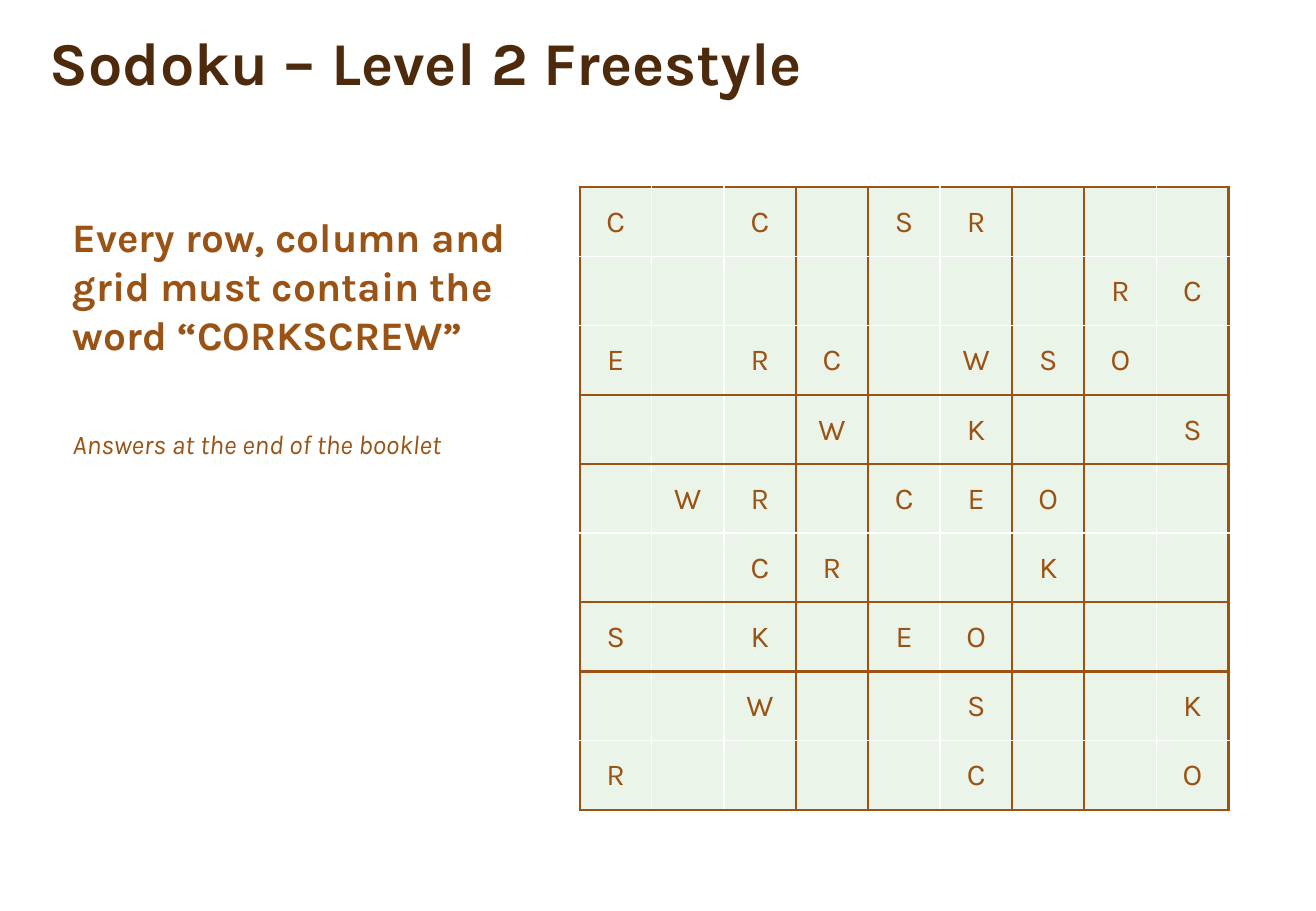
from dataclasses import dataclass

from lxml import etree
from pptx import Presentation
from pptx.dml.color import RGBColor
from pptx.enum.text import MSO_ANCHOR, MSO_AUTO_SIZE, PP_ALIGN
from pptx.oxml.ns import qn
from pptx.util import Inches, Pt

MIDDLE, BOTTOM, TOP = MSO_ANCHOR.MIDDLE, MSO_ANCHOR.BOTTOM, MSO_ANCHOR.TOP
LEFT, CENTER = PP_ALIGN.LEFT, PP_ALIGN.CENTER
NO_FIT = MSO_AUTO_SIZE.NONE
TITLE_ONLY = 5

PUZZLE = """
C.C.SR...
.......RC
E.RC.WSO.
...W.K..S
.WR.CEO..
..CR..K..
S.K.EO...
..W..S..K
R....C..O
""".split()
BLOCK = 3


@dataclass(frozen=True)
class Theme:
    font: str = "Karla"
    dark: str = "4D2A0B"
    brown: str = "9A5315"
    white: str = "FFFFFF"
    mint: str = "EBF4E8"
    title_size: int = 36
    rule_size: int = 24
    note_size: int = 16
    letter_size: int = 18
    thick: float = 1.5
    thin: float = 1


class PuzzleSlide:
    def __init__(self, deck, theme):
        self.theme = theme
        self.width, self.height = deck.slide_width, deck.slide_height
        self.page = deck.slides.add_slide(deck.slide_layouts[TITLE_ONLY])

    def area(self, left, top, width, height):
        return (round(left * self.width), round(top * self.height),
                round(width * self.width), round(height * self.height))

    def style(self, para, size, color, bold=False, italic=False):
        para.font.name = self.theme.font
        para.font.size = Pt(size)
        para.font.bold = bold
        para.font.italic = italic
        para.font.color.rgb = RGBColor.from_string(color)

    def title(self, text, share):
        box = self.page.shapes.title
        box.left, box.top, box.width, box.height = self.area(*share)
        frame = box.text_frame
        frame.text = text
        frame.vertical_anchor = BOTTOM
        frame.auto_size = NO_FIT
        para = frame.paragraphs[0]
        para.alignment = LEFT
        para.line_spacing = 0.9
        self.style(para, self.theme.title_size, self.theme.dark, bold=True)

    def instructions(self, rule, note, share):
        frame = self.page.shapes.add_textbox(*self.area(*share)).text_frame
        frame.word_wrap = True
        frame.vertical_anchor = TOP
        rule_para, note_para = frame.paragraphs[0], frame.add_paragraph()
        rule_para.text, note_para.text = rule, note
        rule_para.space_after = note_para.space_after = Pt(6)
        note_para.space_before = Pt(35)
        self.style(rule_para, self.theme.rule_size, self.theme.brown, bold=True)
        self.style(note_para, self.theme.note_size, self.theme.brown, italic=True)

    def border(self, cell, side, heavy):
        width = self.theme.thick if heavy else self.theme.thin
        color = self.theme.brown if heavy else self.theme.white
        properties = cell._tc.get_or_add_tcPr()
        line = etree.SubElement(properties, qn(f"a:ln{side}"), w=str(Pt(width)))
        fill = etree.SubElement(line, qn("a:solidFill"))
        etree.SubElement(fill, qn("a:srgbClr"), val=color)

    def puzzle(self, rows, share):
        size = len(rows)
        left, top, width, height = self.area(*share)
        table = self.page.shapes.add_table(size, size, left, top, width, height).table
        table.first_row = table.horz_banding = False
        for row, letters in enumerate(rows):
            for column, letter in enumerate(letters):
                self.square(table.cell(row, column), row, column, letter)

    def square(self, cell, row, column, letter):
        for start, end, index in (("L", "R", column), ("T", "B", row)):
            self.border(cell, start, index % BLOCK == 0)
            self.border(cell, end, index % BLOCK == BLOCK - 1
                        or index > 0 and index % BLOCK == 0)
        cell.fill.solid()
        cell.fill.fore_color.rgb = RGBColor.from_string(self.theme.mint)
        if letter == ".":
            return
        cell.vertical_anchor = MIDDLE
        cell.margin_left = cell.margin_right = cell.margin_top = Inches(0.01)
        cell.margin_bottom = 0
        para = cell.text_frame.paragraphs[0]
        para.text = letter
        para.alignment = CENTER
        self.style(para, self.theme.letter_size, self.theme.brown)


def main():
    deck = Presentation()
    deck.slide_width, deck.slide_height = Inches(10.83), Inches(7.5)
    slide = PuzzleSlide(deck, Theme())
    slide.title("Sodoku – Level 2 Freestyle", (0.31 / 10.83, 0, 8.94 / 10.83, 0.86 / 7.5))
    slide.instructions(
        "Every row, column and grid must contain the word “CORKSCREW”",
        "Answers at the end of the booklet",
        (0.5 / 10.83, 1.7 / 7.5, 3.96 / 10.83, 2.83 / 7.5))
    slide.puzzle(PUZZLE, (4.77 / 10.83, 1.54 / 7.5, 5.34 / 10.83, 5.13 / 7.5))
    deck.save("out.pptx")


if __name__ == "__main__":
    main()
